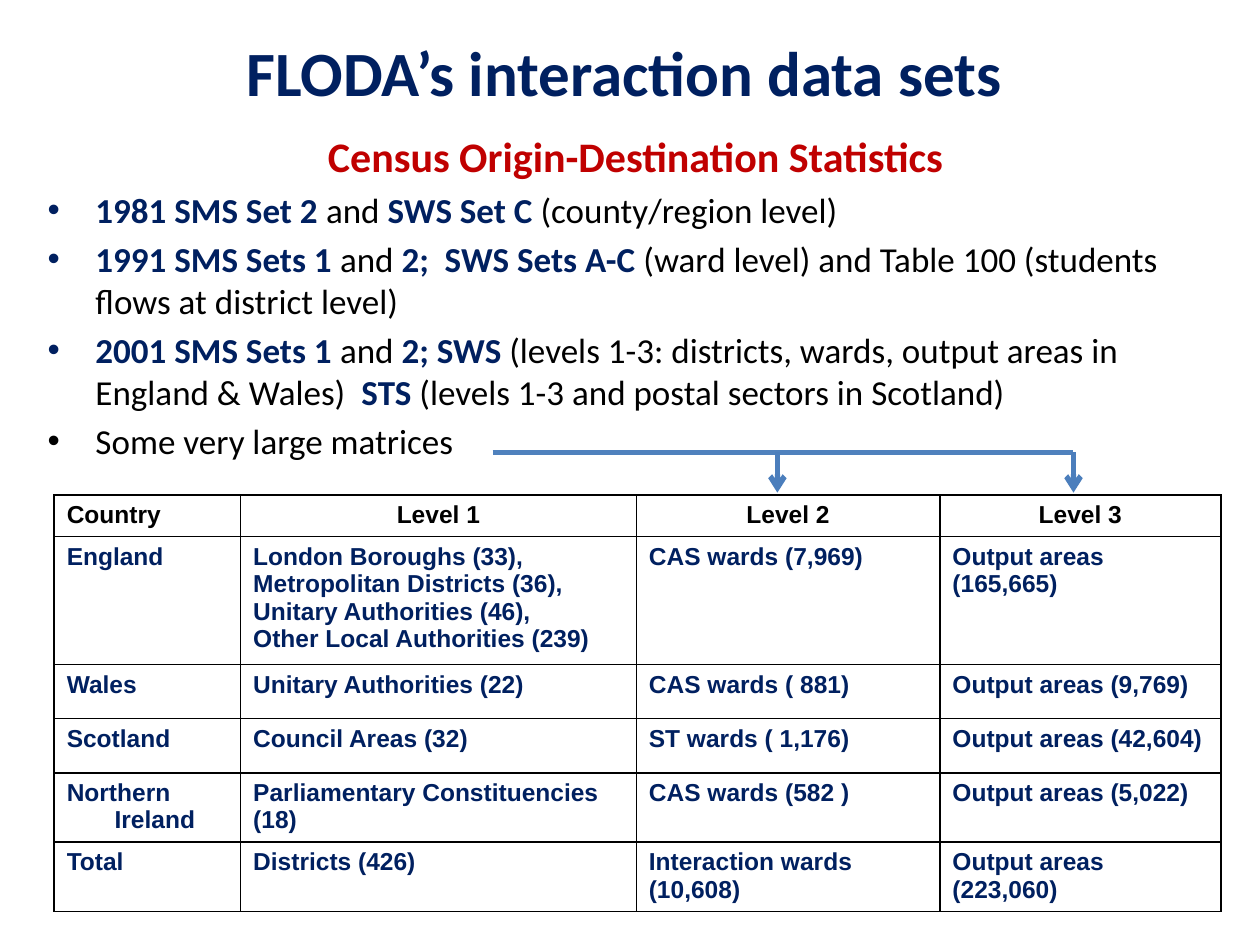
import pptx
import pptx.dml.color
import pptx.enum.shapes
import pptx.enum.text
import pptx.oxml
import pptx.oxml.ns
import pptx.util
from lxml import etree

Inches, Pt = pptx.util.Inches, pptx.util.Pt
ALIGN = pptx.enum.text.PP_ALIGN
ANCHOR = pptx.enum.text.MSO_ANCHOR

# Content
COLORS = {"navy": "002060", "red": "C00000", "black": "000000",
          "blue": "4F81BD", "arrow": "4B7EBC"}
TITLE = "FLODA’s interaction data sets "
SUBTITLE = "Census Origin-Destination Statistics"
# Runs alternate: bold navy, plain black, bold navy, ...
BULLETS = [
    ["1981 SMS Set 2 ", "and ", "SWS Set C ", "(county/region level)"],
    ["1991 SMS Sets 1 ", "and ", "2;  SWS Sets A-C ",
     "(ward level) and Table 100 (students flows at district level)"],
    ["2001 SMS Sets 1 ", "and ", "2; SWS ",
     "(levels 1-3: districts, wards, output areas in England & Wales) ",
     " STS ", "(levels 1-3 and postal sectors in Scotland)"],
    ["", "Some very large matrices"],
]
LEVELS = [
    ["Country", "Level 1", "Level 2", "Level 3"],
    ["England", "London Boroughs (33), Metropolitan Districts (36), "
     "Unitary Authorities (46),\nOther Local Authorities (239)",
     "CAS wards (7,969)", "Output areas (165,665)"],
    ["Wales", "Unitary Authorities (22)", "CAS wards ( 881)", "Output areas (9,769)"],
    ["Scotland", "Council Areas (32)", "ST wards ( 1,176)", "Output areas (42,604)"],
    ["Northern Ireland", "Parliamentary Constituencies (18)", "CAS wards (582 )",
     "Output areas (5,022)"],
    ["Total", "Districts (426)", "Interaction wards (10,608)", "Output areas (223,060)"],
]
COLUMN_WIDTHS = [1.48, 3.14, 2.41, 2.23]
ROW_HEIGHTS = [0.33, 1.01, 0.43, 0.43, 0.55, 0.55]
TABLE_LEFT, TABLE_TOP = 0.43, 3.93
BRANCH_Y, ARROW_TIP_Y = 3.59, 3.91
LEVEL_2_X, LEVEL_3_X = 6.17, 8.52
HANGING = 0.38


def rgb(color):
    return pptx.dml.color.RGBColor.from_string(COLORS[color])


def add_child(parent, tag, **attributes):
    return etree.SubElement(parent, pptx.oxml.ns.qn(tag), attributes)


def set_font(font, size, color, bold=True, name="Calibri"):
    values = {"size": Pt(size), "bold": bold, "name": name}
    for key, value in values.items():
        setattr(font, key, value)
    font.color.rgb = rgb(color)


def add_run(paragraph, text, *font_values):
    run = paragraph.add_run()
    run.text = text
    set_font(run.font, *font_values)


def hang(paragraph):
    properties = paragraph._p.get_or_add_pPr()
    properties.set("marL", str(Inches(HANGING)))
    properties.set("indent", str(-Inches(HANGING)))
    return properties


def add_text_frame(slide, left, top, width, height, anchor):
    frame = slide.shapes.add_textbox(*map(Inches, (left, top, width, height))).text_frame
    frame.word_wrap = True
    frame.vertical_anchor = anchor
    return frame


def add_line(slide, start, end, color, arrow=False):
    line = slide.shapes.add_connector(pptx.enum.shapes.MSO_CONNECTOR.STRAIGHT,
                                      *map(Inches, start + end))
    line.line.width = Pt(3)
    line.line.color.rgb = rgb(color)
    if arrow:
        add_child(line.line._get_or_add_ln(), "a:tailEnd", type="arrow")
    add_child(line._element.spPr, "a:effectLst")


def add_borders(cell):
    properties = cell._tc.get_or_add_tcPr()
    for position, side in enumerate(("a:lnL", "a:lnR", "a:lnT", "a:lnB")):
        border = add_child(properties, side, w=str(Pt(1)))
        fill = add_child(border, "a:solidFill")
        add_child(fill, "a:srgbClr", val=COLORS["black"])
        properties.insert(position, border)


def add_heading(slide):
    title = add_text_frame(slide, 0.51, 0.13, 9, 0.87, ANCHOR.MIDDLE).paragraphs[0]
    title.alignment = ALIGN.CENTER
    add_run(title, TITLE, 36, "navy")


def add_body(slide):
    frame = add_text_frame(slide, 0.28, 0.99, 9.53, 3.62, ANCHOR.TOP)
    subtitle = frame.paragraphs[0]
    subtitle.alignment = ALIGN.CENTER
    subtitle.space_before = Pt(4.8)
    add_run(subtitle, SUBTITLE, 24, "red")
    for runs in BULLETS:
        paragraph = frame.add_paragraph()
        paragraph.space_before = Pt(4)
        properties = hang(paragraph)
        add_child(properties, "a:buFont", typeface="Arial")
        add_child(properties, "a:buChar", char="•")
        for index, text in enumerate(runs):
            if text:
                strong = index % 2 == 0
                add_run(paragraph, text, 20, "navy" if strong else "black", strong)


def add_levels_table(slide):
    table = slide.shapes.add_table(
        len(LEVELS), len(COLUMN_WIDTHS), Inches(TABLE_LEFT), Inches(TABLE_TOP),
        Inches(sum(COLUMN_WIDTHS)), Inches(sum(ROW_HEIGHTS))).table
    table.first_row = table.horz_banding = False
    for column, width in zip(table.columns, COLUMN_WIDTHS):
        column.width = Inches(width)
    for r, (texts, height) in enumerate(zip(LEVELS, ROW_HEIGHTS)):
        table.rows[r].height = Inches(height)
        for c, text in enumerate(texts):
            cell = table.cell(r, c)
            cell.text = text
            cell.margin_bottom = Inches(0.03)
            cell.fill.background()
            add_borders(cell)
            for paragraph in cell.text_frame.paragraphs:
                if c == 0:
                    paragraph.alignment = ALIGN.JUSTIFY
                    hang(paragraph)
                else:
                    paragraph.alignment = ALIGN.CENTER if r == 0 else ALIGN.LEFT
                for run in paragraph.runs:
                    set_font(run.font, 14, "navy" if r else "black", name="Arial")


def main():
    deck = pptx.Presentation()
    deck.slide_width, deck.slide_height = Inches(10), Inches(7.5)
    slide = deck.slides.add_slide(deck.slide_layouts[6])
    add_heading(slide)
    add_body(slide)
    add_levels_table(slide)
    # Branching arrow from the last bullet to the two largest levels
    add_line(slide, (3.91, BRANCH_Y), (LEVEL_3_X, BRANCH_Y), "blue")
    for x in (LEVEL_3_X, LEVEL_2_X):
        add_line(slide, (x, BRANCH_Y), (x, ARROW_TIP_Y), "arrow", arrow=True)
    deck.save("out.pptx")


if __name__ == "__main__":
    main()
